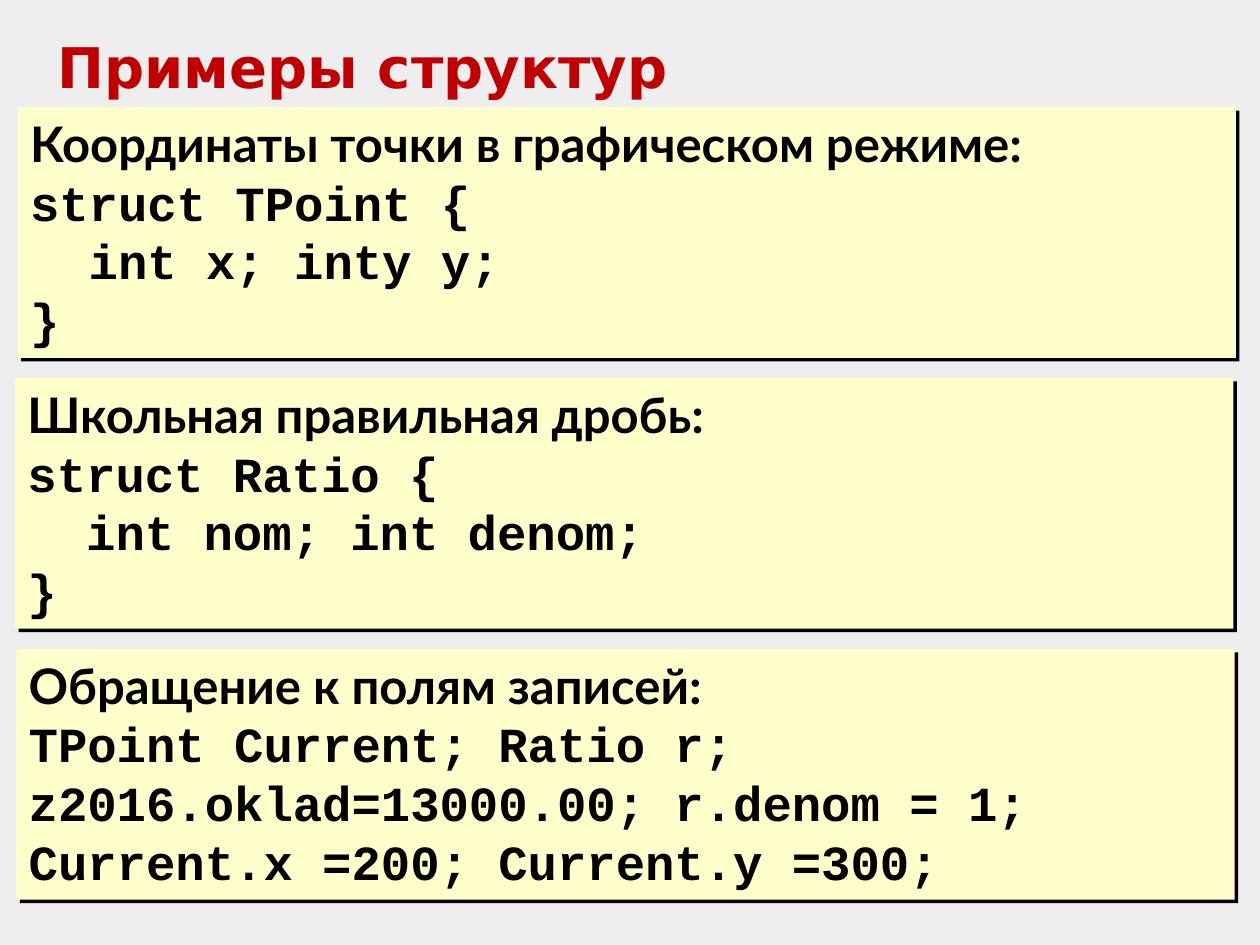
from lxml.etree import SubElement
from pptx import Presentation
from pptx.dml.color import RGBColor
from pptx.enum.shapes import MSO_SHAPE as Shape
from pptx.enum.text import MSO_ANCHOR as Anchor, PP_ALIGN as Align
from pptx.oxml.ns import qn
from pptx.util import Inches, Pt

TITLE = "Примеры структур"
# left edge, heading, code lines
CARDS = [
    (0.14, "Координаты точки в графическом режиме:",
     ["struct TPoint {", "  int x; inty y;", "}"]),
    (0.12, "Школьная правильная дробь:",
     ["struct Ratio {", "  int nom; int denom;", "}"]),
    (0.13, "Обращение к полям записей:",
     ["TPoint Current; Ratio r;", "z2016.oklad=13000.00; r.denom = 1;",
      "Current.x =200; Current.y =300;"]),
]
TOP, STEP, WIDTH, HEIGHT = 0.85, 2.15, 9.67, 1.99


def color(code):
    return RGBColor.from_string(code)


def write(frame, lines, size, ink):
    """Fill a frame with (text, font) lines, one paragraph each."""
    frame.word_wrap = True
    frame.vertical_anchor = Anchor.TOP
    for i, (text, face) in enumerate(lines):
        para = frame.paragraphs[0] if i == 0 else frame.add_paragraph()
        para.alignment = Align.LEFT
        run = para.add_run()
        run.text = text
        font = run.font
        font.name, font.size, font.bold = face, Pt(size), True
        font.color.rgb = color(ink)


def cast_shadow(shape):
    """Give the shape a hard black shadow to the lower right."""
    shape.shadow.inherit = False
    effects = shape._element.spPr.find(qn("a:effectLst"))
    outer = SubElement(effects, qn("a:outerShdw"), blurRad="0",
                       dist=str(Pt(2.8)), dir=str(45 * 60000),
                       algn="ctr", rotWithShape="0")
    SubElement(outer, qn("a:srgbClr"), val="000000")


def add_card(slide, left, top, heading, code):
    card = slide.shapes.add_shape(Shape.RECTANGLE, Inches(left), Inches(top),
                                  Inches(WIDTH), Inches(HEIGHT))
    card.fill.solid()
    card.fill.fore_color.rgb = color("FFFFCC")
    card.line.fill.background()
    cast_shadow(card)
    lines = [(heading, "Lato")] + [(line, "Courier New") for line in code]
    write(card.text_frame, lines, 28, "000000")


def main():
    deck = Presentation()
    deck.slide_width, deck.slide_height = Inches(10), Inches(7.5)
    slide = deck.slides.add_slide(deck.slide_layouts[6])
    back = slide.background.fill
    back.solid()
    back.fore_color.rgb = color("EEEEEE")

    title = slide.shapes.add_textbox(Inches(0.36), Inches(0.21),
                                     Inches(9.28), Inches(0.64))
    write(title.text_frame, [(TITLE, "DejaVu Sans")], 32, "C00000")
    for i, (left, heading, code) in enumerate(CARDS):
        add_card(slide, left, TOP + i * STEP, heading, code)
    deck.save("out.pptx")


if __name__ == "__main__":
    main()
